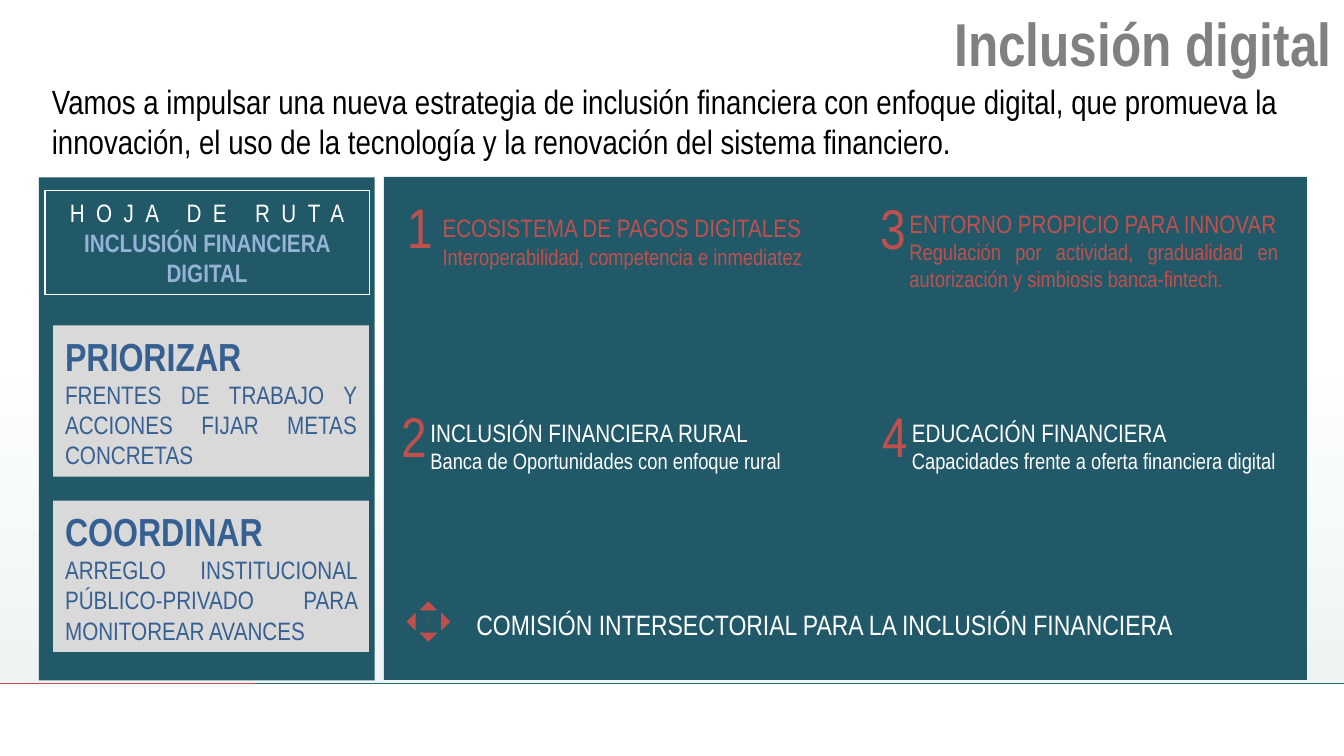
from lxml.etree import SubElement
from pptx import Presentation
from pptx.dml.color import RGBColor
from pptx.enum.shapes import MSO_CONNECTOR, MSO_SHAPE
from pptx.enum.text import MSO_ANCHOR, PP_ALIGN
from pptx.oxml.ns import qn
from pptx.util import Pt

FONT = "Arial Narrow"
TEAL, RED, WHITE, BLUE = "215968", "C0504D", "FFFFFF", "376092"
GREY, RULE_GREEN = "D9D9D9", "217168"
JUSTIFY = PP_ALIGN.JUSTIFY


def color(hex_value):
    return RGBColor.from_string(hex_value)


def write(box, lines, align=JUSTIFY, anchor=MSO_ANCHOR.TOP):
    """Each line is (text, size, colour, bold)."""
    frame = box.text_frame
    frame_format = {
        "word_wrap": True, "vertical_anchor": anchor,
        "margin_left": Pt(7.2), "margin_right": Pt(7.2),
        "margin_top": Pt(3.6), "margin_bottom": Pt(3.6),
    }
    for name, value in frame_format.items():
        setattr(frame, name, value)
    for index, (text, size, hex_value, bold) in enumerate(lines):
        paragraph = frame.paragraphs[0] if index == 0 else frame.add_paragraph()
        paragraph.alignment = align
        run = paragraph.add_run()
        run.text = text
        font_format = {"name": FONT, "size": Pt(size), "bold": bold}
        for name, value in font_format.items():
            setattr(run.font, name, value)
        run.font.color.rgb = color(hex_value)


def add_text(slide, bounds, lines, align=JUSTIFY):
    box = slide.shapes.add_textbox(*map(Pt, bounds))
    write(box, lines, align)
    return box


def add_block(slide, bounds, fill=None, line=None, kind=MSO_SHAPE.RECTANGLE):
    block = slide.shapes.add_shape(kind, *map(Pt, bounds))
    block.shadow.inherit = False
    if fill:
        block.fill.solid()
        block.fill.fore_color.rgb = color(fill)
    else:
        block.fill.background()
    if line:
        block.line.color.rgb = color(line)
        block.line.width = Pt(0.75)
    else:
        block.line.fill.background()
    return block


def add_rule(slide, length, hex_value):
    rule = slide.shapes.add_connector(
        MSO_CONNECTOR.STRAIGHT, 0, Pt(406.8), Pt(length), Pt(406.8))
    rule.line.color.rgb = color(hex_value)
    rule.line.width = Pt(1)
    SubElement(rule._element.spPr, qn("a:effectLst"))


def add_backdrop(slide):
    backdrop = add_block(slide, (0, 202.3, 800, 204.5), WHITE)
    backdrop.fill.gradient()
    backdrop.fill.gradient_angle = 90
    for stop, hex_value in zip(backdrop.fill.gradient_stops, ("EDF4F3", WHITE)):
        stop.color.rgb = color(hex_value)
    add_rule(slide, 800, RULE_GREEN)
    add_rule(slide, 152, RED)


def add_roadmap_heading(slide):
    heading = add_block(slide, (26.8, 113.2, 193, 62), line=WHITE)
    write(heading, [("HOJA DE RUTA", 15, WHITE, False),
                    ("INCLUSIÓN FINANCIERA DIGITAL", 15, "95B3D7", True)],
          PP_ALIGN.CENTER, MSO_ANCHOR.MIDDLE)
    # Wide letter spacing on the first line
    spaced_run = heading.text_frame.paragraphs[0].runs[0]
    spaced_run._r.get_or_add_rPr().set("spc", "680")


def add_task(slide, top, name, detail):
    card = add_block(slide, (31.7, top, 188, 90), GREY)
    write(card, [(name, 23.3, BLUE, True), (detail, 15, BLUE, False)],
          anchor=MSO_ANCHOR.MIDDLE)


def add_front(slide, number, number_at, text_at, name, detail, hex_value):
    add_text(slide, (*text_at, 234, 42),
             [(name, 15, hex_value, False), (detail, 13.3, hex_value, False)])
    add_text(slide, (*number_at, 36, 47.5), [(str(number), 33.3, RED, False)])


def main():
    prs = Presentation()
    prs.slide_width, prs.slide_height = Pt(800), Pt(450)
    slide = prs.slides.add_slide(prs.slide_layouts[5])

    add_backdrop(slide)

    # Title and introduction
    title = slide.shapes.title
    title_bounds = {"left": 311.8, "top": 0, "width": 488.2, "height": 51}
    for name, value in title_bounds.items():
        setattr(title, name, Pt(value))
    write(title, [("Inclusión digital", 36, "808080", True)], PP_ALIGN.RIGHT)
    add_text(slide, (23.8, 44.6, 754.6, 55.4), [(
        "Vamos a impulsar una nueva estrategia de inclusión financiera con "
        "enfoque digital, que promueva la innovación, el uso de la tecnología "
        "y la renovación del sistema financiero.", 20, "000000", False)],
        PP_ALIGN.LEFT)

    # Panels
    add_block(slide, (228.5, 105.3, 549.4, 299.5), TEAL)
    add_block(slide, (23.1, 105.6, 200, 299.5), TEAL)

    # Roadmap
    add_roadmap_heading(slide)
    add_task(slide, 193.7, "PRIORIZAR",
             "FRENTES DE TRABAJO Y ACCIONES FIJAR METAS CONCRETAS")
    add_task(slide, 298, "COORDINAR",
             "ARREGLO INSTITUCIONAL PÚBLICO-PRIVADO PARA MONITOREAR AVANCES")

    # Work fronts
    fronts = [
        ((235.4, 111), (256.3, 123.1), "ECOSISTEMA DE PAGOS DIGITALES",
         "Interoperabilidad, competencia e inmediatez", RED),
        ((231.8, 235.6), (249.1, 244.8), "INCLUSIÓN FINANCIERA RURAL",
         "Banca de Oportunidades con enfoque rural", WHITE),
        ((517, 111.6), (534.2, 120.3), "ENTORNO PROPICIO PARA INNOVAR",
         "Regulación por actividad, gradualidad en autorización y simbiosis "
         "banca-fintech.", RED),
        ((518.4, 235.6), (535.7, 244.8), "EDUCACIÓN FINANCIERA",
         "Capacidades frente a oferta financiera digital", WHITE),
    ]
    for number, front in enumerate(fronts, 1):
        add_front(slide, number, *front)

    # Commission
    arrows = add_block(slide, (242, 358, 26, 24), RED, kind=MSO_SHAPE.QUAD_ARROW)
    for index, value in enumerate((0, 0.225, 0.225)):
        arrows.adjustments[index] = value
    add_text(slide, (276.5, 357.8, 484.6, 27.4), [(
        "COMISIÓN INTERSECTORIAL PARA LA INCLUSIÓN FINANCIERA",
        16.7, WHITE, False)])

    prs.save("out.pptx")


if __name__ == "__main__":
    main()
